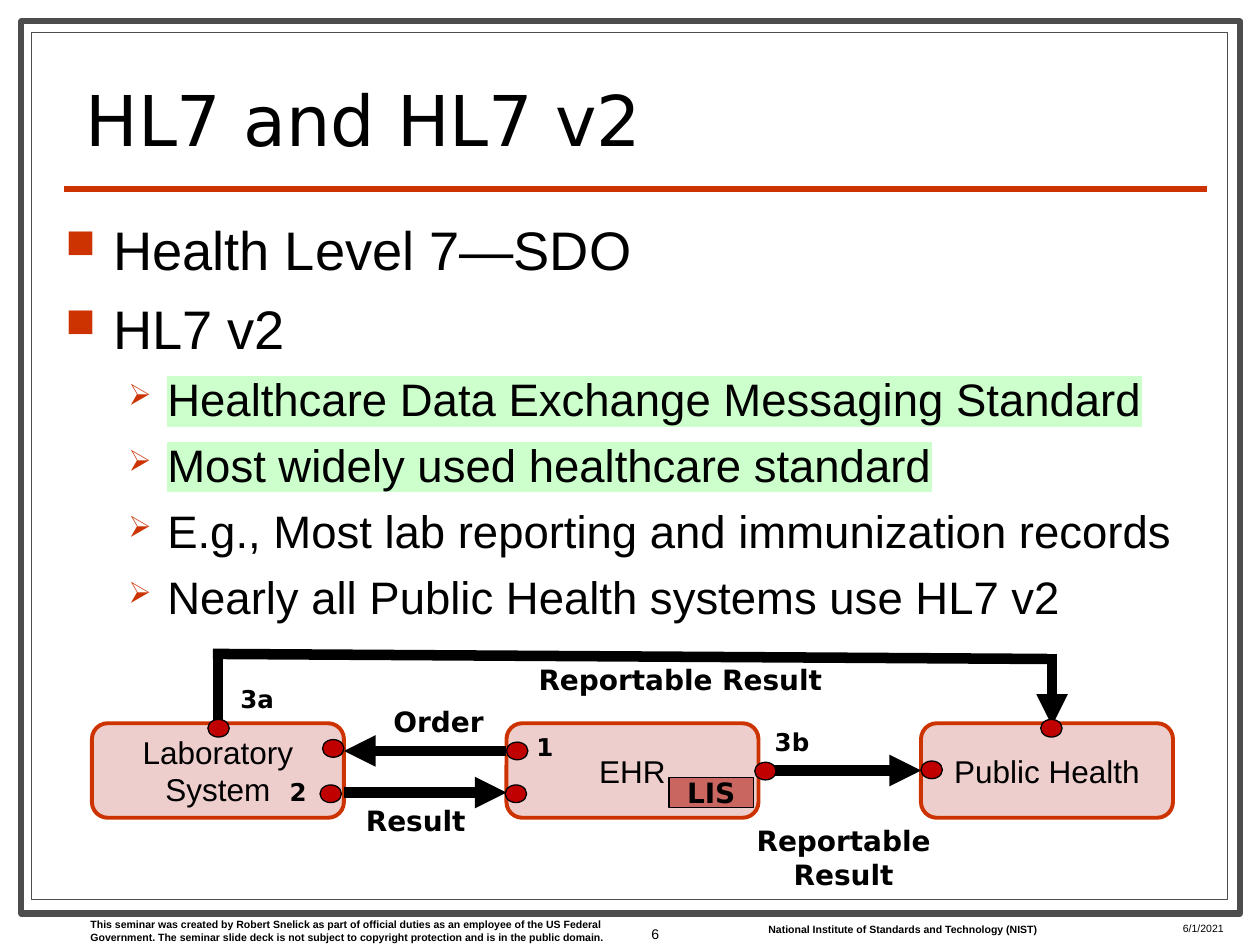
from dataclasses import dataclass
from typing import NamedTuple, Optional

from lxml.etree import SubElement
from pptx import Presentation
from pptx.dml.color import RGBColor
from pptx.enum.shapes import MSO_CONNECTOR as Link, MSO_SHAPE as Preset
from pptx.enum.text import MSO_ANCHOR as Anchor, PP_ALIGN as Align
from pptx.oxml.ns import qn
from pptx.util import Inches, Pt

WIDTH, HEIGHT = Inches(10), Inches(7.5)
COLUMNS, ROWS = 100, 75
TOP, LEFT, RIGHT = 0, 1, 3


@dataclass(frozen=True)
class Theme:
    sans: str = "Arial"
    display: str = "DejaVu Sans"
    ink: str = "000000"
    paper: str = "FFFFFF"
    frame: str = "4D4D4D"
    accent: str = "CC3300"
    system: str = "EECECC"
    module: str = "C96660"
    port: str = "C00000"
    highlight: str = "CCFFCC"
    title: float = 40
    node: float = 18
    label: float = 16
    step: float = 14
    number: float = 8
    footer: float = 6


THEME = Theme()


class Area(NamedTuple):
    column: float
    row: float
    columns: float
    rows: float


class Level(NamedTuple):
    size: float
    before: float
    margin: float
    hanging: float
    bullet: str
    percent: int


class Point(NamedTuple):
    text: str
    level: Level
    highlight: Optional[str] = None


class Flow(NamedTuple):
    start: tuple
    end: tuple
    arrow: bool = True


class Caption(NamedTuple):
    text: str
    area: Area


def across(columns: float) -> int:
    return round(WIDTH * columns / COLUMNS)


def down(rows: float) -> int:
    return round(HEIGHT * rows / ROWS)


def place(area: Area) -> tuple:
    return across(area.column), down(area.row), across(area.columns), down(area.rows)


def color(value: str) -> RGBColor:
    return RGBColor.from_string(value)


def write(para, text: str, *, size: float, font: str = THEME.sans, bold: bool = False,
          align=Align.LEFT, spacing: Optional[float] = None,
          highlight: Optional[str] = None) -> None:
    para.alignment = align
    if spacing:
        para.line_spacing = spacing
    span = para.add_run()
    span.text = text
    span.font.size, span.font.bold = Pt(size), bold
    span.font.color.rgb = color(THEME.ink)
    if highlight:
        mark = SubElement(span.font._element, qn("a:highlight"))
        SubElement(mark, qn("a:srgbClr"), val=highlight)
    span.font.name = font


def add_text(page, area: Area, text: str, *, wrap: bool = True, anchor=Anchor.TOP, **style) -> None:
    frame = page.shapes.add_textbox(*place(area)).text_frame
    frame.word_wrap, frame.vertical_anchor = wrap, anchor
    write(frame.paragraphs[0], text, **style)


def add_box(page, preset, area: Area, fill: str, line: str, weight: float, text: str = "", **style):
    box = page.shapes.add_shape(preset, *place(area))
    box.shadow.inherit = False
    box.fill.solid()
    box.fill.fore_color.rgb = color(fill)
    box.line.color.rgb = color(line)
    box.line.width = Pt(weight)
    if text:
        box.text_frame.word_wrap = True
        box.text_frame.vertical_anchor = Anchor.MIDDLE
        write(box.text_frame.paragraphs[0], text, align=Align.CENTER, **style)
    return box


def add_line(page, flow: Flow, line: str = THEME.ink, weight: float = 6):
    (x1, y1), (x2, y2) = flow.start, flow.end
    link = page.shapes.add_connector(Link.STRAIGHT, across(x1), down(y1), across(x2), down(y2))
    link.line.color.rgb = color(line)
    link.line.width = Pt(weight)
    if flow.arrow:
        SubElement(link.line._get_or_add_ln(), qn("a:tailEnd"), type="triangle")
    SubElement(link._element.spPr, qn("a:effectLst"))
    return link


def add_points(page, area: Area, points: list) -> None:
    frame = page.shapes.add_textbox(*place(area)).text_frame
    frame.word_wrap = True
    for index, point in enumerate(points):
        para = frame.add_paragraph() if index else frame.paragraphs[0]
        level = point.level
        if index:
            para.space_before = Pt(level.before)
        settings = para._p.get_or_add_pPr()
        settings.set("marL", str(across(level.margin)))
        settings.set("indent", str(-across(level.hanging)))
        tint = SubElement(settings, qn("a:buClr"))
        SubElement(tint, qn("a:srgbClr"), val=THEME.accent)
        SubElement(settings, qn("a:buSzPct"), val=str(level.percent * 1000))
        SubElement(settings, qn("a:buChar"), char=level.bullet)
        write(para, point.text, size=level.size, highlight=point.highlight)


MAIN = Level(31, 7.5, 3.8, 3.8, "■", 75)
DETAIL = Level(26, 6.5, 8.1, 3.1, "➢", 65)
POINTS = [
    Point("Health Level 7—SDO", MAIN),
    Point("HL7 v2", MAIN),
    Point("Healthcare Data Exchange Messaging Standard", DETAIL, THEME.highlight),
    Point("Most widely used healthcare standard", DETAIL, THEME.highlight),
    Point("E.g., Most lab reporting and immunization records", DETAIL),
    Point("Nearly all Public Health systems use HL7 v2", DETAIL),
]
SYSTEMS = ["Laboratory System", "EHR", "Public Health"]
SYSTEM_LEFT, SYSTEM_TOP, SYSTEM_PITCH = 7.3, 57.4, 32.9
FLOWS = [
    Flow((83.5, 51.9), (83.5, 57.6)),
    Flow((40.2, 59.6), (27.3, 59.6)),
    Flow((27.3, 62.9), (40.2, 62.9)),
    Flow((16.9, 51.9), (83.1, 52.3), False),
]
LABELS = [
    Caption("Order", Area(30.2, 55.4, 9.2, 3.7)),
    Caption("Result", Area(27.8, 63.3, 10.4, 3.7)),
    Caption("Reportable Result", Area(58.5, 64.9, 16.9, 6.4)),
    Caption("Reportable Result", Area(39.7, 52.1, 28.6, 3.7)),
]
PORTS = [(25.6, 58.7), (25.4, 62.3), (40.1, 62.3), (59.9, 60.5),
         (40.2, 58.9), (16.5, 57.1), (82.6, 57.1), (73.1, 60.4)]
STEPS = [
    Caption("2", Area(22, 61.2, 3.4, 3.4)),
    Caption("1", Area(41.6, 57.6, 3.4, 3.4)),
    Caption("3b", Area(60.5, 57.2, 4.8, 3.4)),
    Caption("3a", Area(18.1, 53.8, 4.7, 3.4)),
]


def draw_frame(page) -> None:
    add_box(page, Preset.RECTANGLE, Area(1.7, 1.7, 96.7, 70.8), THEME.paper, THEME.frame, 3.5)
    add_box(page, Preset.RECTANGLE, Area(2.5, 2.6, 94.9, 68.8), THEME.paper, THEME.frame, 0.75)
    add_line(page, Flow((5.1, 15), (95.8, 15), False), THEME.accent, 3)
    add_text(page, Area(6.2, 72.4, 43.3, 3),
             "This seminar was created by Robert Snelick as part of official duties as an employee of "
             "the US Federal Government. The seminar slide deck is not subject to copyright protection "
             "and is in the public domain.", size=THEME.footer, bold=True)
    add_text(page, Area(60, 72.8, 23.8, 2), "National Institute of Standards and Technology (NIST)",
             size=THEME.footer, bold=True)
    add_text(page, Area(92.9, 72.7, 6.3, 1.6), "6/1/2021", size=THEME.footer)
    add_text(page, Area(47.5, 71.5, 5.8, 5.2), "6", size=THEME.number,
             align=Align.RIGHT, anchor=Anchor.MIDDLE)


def draw_diagram(page) -> None:
    laboratory, records, public = [
        add_box(page, Preset.ROUNDED_RECTANGLE,
                Area(SYSTEM_LEFT + index * SYSTEM_PITCH, SYSTEM_TOP, 20, 7.5),
                THEME.system, THEME.accent, 2.25, name, size=THEME.node)
        for index, name in enumerate(SYSTEMS)]
    report = add_line(page, Flow((60.2, 61.1), (73.1, 61.1)))
    report.begin_connect(records, RIGHT)
    report.end_connect(public, LEFT)
    for flow in FLOWS:
        add_line(page, flow)
    riser = add_line(page, Flow((17.3, 51.6), (17.3, 57.4), False))
    riser.end_connect(laboratory, TOP)
    bold = dict(font=THEME.display, bold=True)
    for text, area in LABELS:
        add_text(page, area, text, size=THEME.label, align=Align.CENTER, **bold)
    add_box(page, Preset.RECTANGLE, Area(53.1, 61.7, 6.7, 2.4), THEME.module, THEME.ink, 0.75,
            "LIS", size=THEME.label, **bold)
    for column, row in PORTS:
        add_box(page, Preset.OVAL, Area(column, row, 1.7, 1.4), THEME.port, THEME.ink, 0.75)
    for text, area in STEPS:
        add_text(page, area, text, size=THEME.step, wrap=False, **bold)


def main() -> None:
    deck = Presentation()
    deck.slide_width, deck.slide_height = WIDTH, HEIGHT
    page = deck.slides.add_slide(deck.slide_layouts[6])
    draw_frame(page)
    add_text(page, Area(5.8, 4.2, 89.2, 9), "HL7 and HL7 v2", size=THEME.title,
             font=THEME.display, spacing=0.8, anchor=Anchor.BOTTOM)
    add_points(page, Area(4.2, 16.7, 91.7, 52.9), POINTS)
    draw_diagram(page)
    deck.save("out.pptx")


if __name__ == "__main__":
    main()
